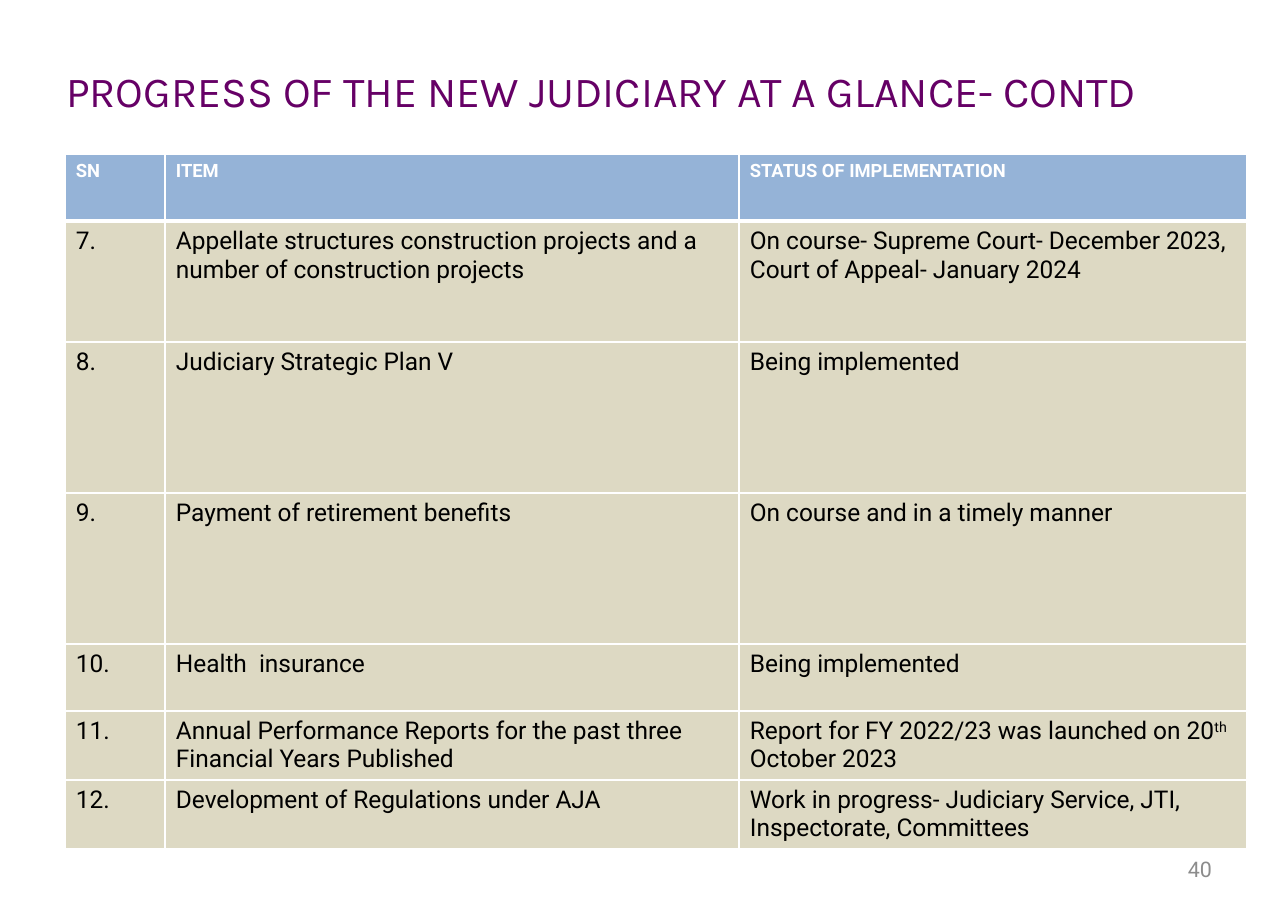
from lxml import etree
from pptx import Presentation
from pptx.dml.color import RGBColor
from pptx.enum.text import MSO_ANCHOR, MSO_AUTO_SIZE, PP_ALIGN
from pptx.oxml.ns import qn
from pptx.util import Pt

MIDDLE = MSO_ANCHOR.MIDDLE
NO_AUTOFIT = MSO_AUTO_SIZE.NONE
LEFT, RIGHT = PP_ALIGN.LEFT, PP_ALIGN.RIGHT

# Content; "^" encloses superscript text
TITLE = "PROGRESS OF THE NEW JUDICIARY AT A GLANCE- CONTD"
PAGE_NUMBER = "40"
PROGRESS = [
    ("SN", "ITEM", "STATUS OF IMPLEMENTATION"),
    ("7.", "Appellate structures construction projects and a number of construction projects",
     "On course- Supreme Court- December 2023, Court of Appeal- January 2024"),
    ("8.", "Judiciary Strategic Plan V", "Being implemented"),
    ("9.", "Payment of retirement benefits", "On course and in a timely manner"),
    ("10.", "Health  insurance", "Being implemented"),
    ("11.", "Annual Performance Reports for the past three Financial Years Published",
     "Report for FY 2022/23 was launched on 20^th^ October 2023"),
    ("12.", "Development of Regulations under AJA",
     "Work in progress- Judiciary Service, JTI, Inspectorate, Committees"),
]

# Lengths in px
EMU_PER_PX = 8298
SLIDE_SIZE = (1288, 911)
TITLE_BOX = (54, 14, 1159, 152)
TABLE_LEFT, TABLE_TOP = 65, 154
COLUMN_WIDTHS = (100, 574, 508)
ROW_HEIGHTS = (67, 121, 151, 151, 67, 69, 69)
PAGE_NUMBER_BOX = (923, 845, 301, 48)
BOX_INSETS = (12, 7)
CELL_INSETS = (11, 6)


def px(length):
    return round(length * EMU_PER_PX)


def color(hex_value):
    return RGBColor.from_string(hex_value)


def set_insets(holder, insets):
    holder.margin_left = holder.margin_right = px(insets[0])
    holder.margin_top = holder.margin_bottom = px(insets[1])


def format_font(font, name, size, hex_value, bold=False):
    font.name, font.size, font.bold = name, Pt(size), bold
    font.color.rgb = color(hex_value)


def fill_box(box, bounds, text, align, *font_format):
    box.left, box.top, box.width, box.height = map(px, bounds)
    frame = box.text_frame
    frame.text = text
    frame.word_wrap = True
    frame.auto_size = NO_AUTOFIT
    frame.vertical_anchor = MIDDLE
    set_insets(frame, BOX_INSETS)
    paragraph = frame.paragraphs[0]
    paragraph.alignment = align
    format_font(paragraph.runs[0].font, *font_format)


def add_borders(cell, bottom_points):
    properties = cell._tc.get_or_add_tcPr()
    widths = {"a:lnL": 1, "a:lnR": 1, "a:lnT": 1, "a:lnB": bottom_points}
    for position, (side, points) in enumerate(widths.items()):
        line = etree.Element(qn(side), w=str(Pt(points)))
        fill = etree.SubElement(line, qn("a:solidFill"))
        etree.SubElement(fill, qn("a:srgbClr"), val="FFFFFF")
        properties.insert(position, line)


def fill_cell(cell, text, is_header):
    set_insets(cell, CELL_INSETS)
    cell.fill.solid()
    cell.fill.fore_color.rgb = color("95B3D7" if is_header else "DDD9C3")
    add_borders(cell, 3 if is_header else 1)
    font_format = ("Roboto", 12, "FFFFFF", True) if is_header else ("Roboto", 16, "000000")
    paragraph = cell.text_frame.paragraphs[0]
    for index, part in enumerate(text.split("^")):
        run = paragraph.add_run()
        run.text = part
        format_font(run.font, *font_format)
        if index % 2:
            run._r.get_or_add_rPr().set("baseline", "30000")


def main():
    presentation = Presentation()
    presentation.slide_width, presentation.slide_height = map(px, SLIDE_SIZE)
    slide = presentation.slides.add_slide(presentation.slide_layouts[5])

    # Title
    fill_box(slide.shapes.title, TITLE_BOX, TITLE, LEFT, "Karla", 28, "660066")

    # Progress table
    table = slide.shapes.add_table(
        len(PROGRESS), len(COLUMN_WIDTHS), px(TABLE_LEFT), px(TABLE_TOP),
        px(sum(COLUMN_WIDTHS)), px(sum(ROW_HEIGHTS))).table
    table.horz_banding = False
    for column, width in zip(table.columns, COLUMN_WIDTHS):
        column.width = px(width)
    for row_index, (row, height, texts) in enumerate(zip(table.rows, ROW_HEIGHTS, PROGRESS)):
        row.height = px(height)
        for cell, text in zip(row.cells, texts):
            fill_cell(cell, text, row_index == 0)

    # Page number
    page_number = slide.shapes.add_textbox(*map(px, PAGE_NUMBER_BOX))
    fill_box(page_number, PAGE_NUMBER_BOX, PAGE_NUMBER, RIGHT, "Roboto", 14, "8C8C8C")

    presentation.save("out.pptx")


if __name__ == "__main__":
    main()
